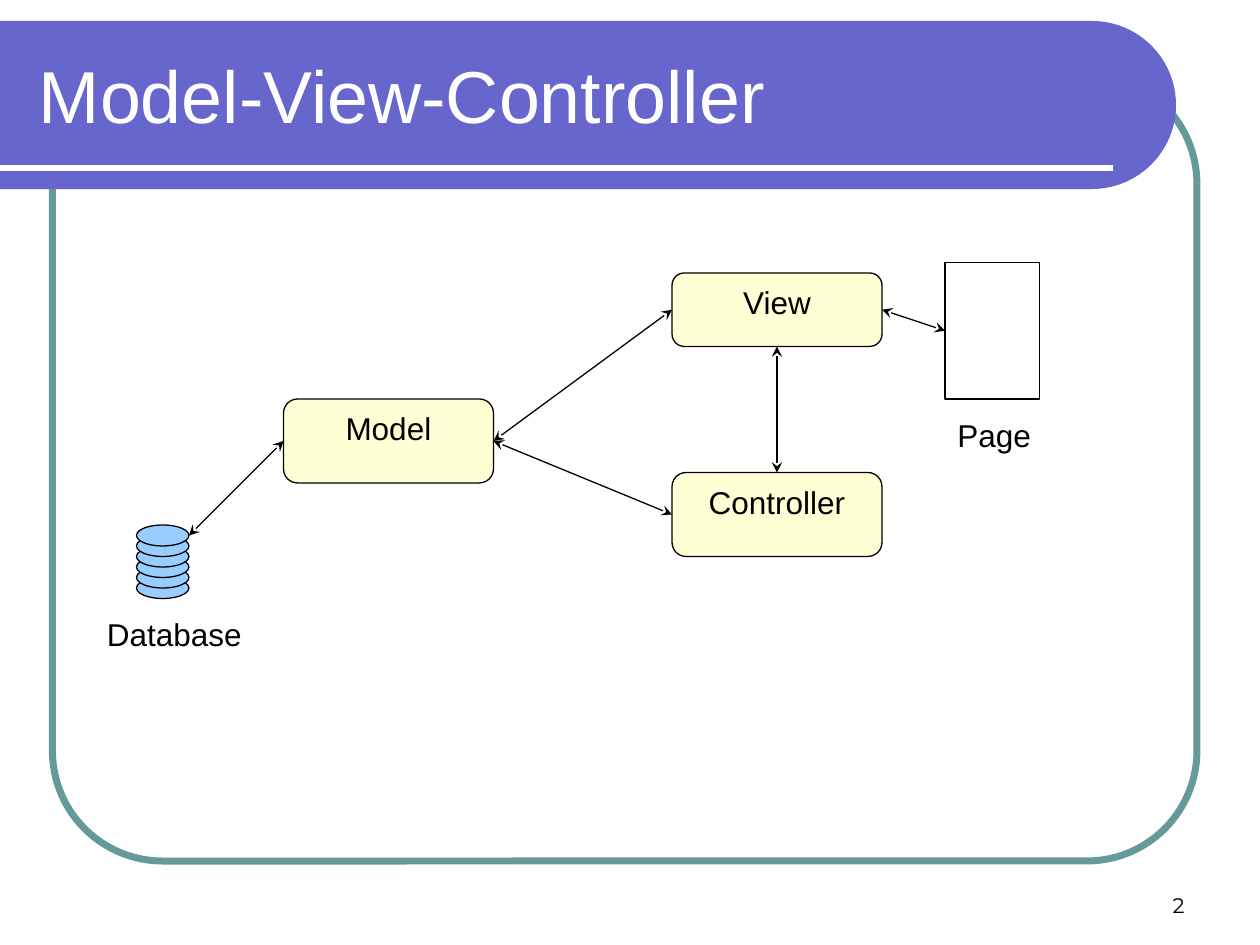
from lxml.etree import SubElement
from pptx import Presentation
from pptx.dml.color import RGBColor
from pptx.enum.shapes import MSO_CONNECTOR as Connector, MSO_SHAPE as Shape
from pptx.enum.text import MSO_ANCHOR as Anchor, MSO_AUTO_SIZE as AutoSize, PP_ALIGN as Align
from pptx.oxml.ns import qn
from pptx.util import Pt

WHITE = RGBColor(0xFF, 0xFF, 0xFF)
BLACK = RGBColor(0x00, 0x00, 0x00)
TEAL = RGBColor(0x66, 0x99, 0x99)
VIOLET = RGBColor(0x66, 0x66, 0xCC)
CREAM = RGBColor(0xFF, 0xFF, 0xD5)
SKY = RGBColor(0x99, 0xCC, 0xFF)

TOP, LEFT, BOTTOM, RIGHT = range(4)


def set_values(target, values):
    for name, value in values.items():
        setattr(target, name, value)


def write_text(shape, text, size, color=BLACK, font="Arial", frame=None, paragraph=None):
    text_frame = shape.text_frame
    text_frame.text = text
    set_values(text_frame, frame or {})
    first = text_frame.paragraphs[0]
    set_values(first, paragraph or {})
    set_values(first.runs[0].font, {"name": font, "size": Pt(size)})
    first.runs[0].font.color.rgb = color


def add_shape(slide, kind, box, fill=None, line=None, width=0.75):
    shape = slide.shapes.add_shape(kind, *map(Pt, box))
    shape.shadow.inherit = False
    if fill is None:
        shape.fill.background()
    else:
        shape.fill.solid()
        shape.fill.fore_color.rgb = fill
    if line is None:
        shape.line.fill.background()
    else:
        shape.line.color.rgb = line
        shape.line.width = Pt(width)
    return shape


def add_line(slide, start, end, color, width):
    line = slide.shapes.add_connector(Connector.STRAIGHT, *map(Pt, start + end))
    line.line.color.rgb = color
    line.line.width = Pt(width)
    SubElement(line._element.spPr, qn("a:effectLst"))
    return line


def add_arrow(slide, start, end):
    arrow = add_line(slide, (78 + 30, 306), (162, 252), BLACK, 0.75)
    if isinstance(start[0], (int, float)):
        arrow.begin_x, arrow.begin_y = map(Pt, start)
    else:
        arrow.begin_connect(*start)
    arrow.end_connect(*end)
    outline = arrow.line._get_or_add_ln()
    for tag in ("a:headEnd", "a:tailEnd"):
        SubElement(outline, qn(tag), type="stealth")


def add_label(slide, text, box):
    label = slide.shapes.add_textbox(*map(Pt, box))
    write_text(label, text, 18, frame={"word_wrap": False},
               paragraph={"space_before": Pt(1.5)})


def add_header(slide, box):
    left, top, width, height = box
    banner_box = (left + (width - height) / 2, top - (width - height) / 2, height, width)
    banner = add_shape(slide, Shape.ROUND_2_SAME_RECTANGLE, banner_box, VIOLET)
    banner.adjustments[0] = 0.5
    banner.rotation = 90
    rule_y = top + height - 12
    add_line(slide, (left, rule_y), (left + width - 36, rule_y), WHITE, 3)

    title = slide.shapes.title
    set_values(title, {"left": Pt(left + 15), "top": Pt(top + 6),
                       "width": Pt(631.5), "height": Pt(72)})
    write_text(title, "Model-View-Controller", 42, WHITE,
               frame={"vertical_anchor": Anchor.MIDDLE, "auto_size": AutoSize.NONE},
               paragraph={"alignment": Align.LEFT})
    slide.shapes._spTree.append(title._element)


def add_page_number(slide, box):
    number = slide.shapes.add_textbox(*map(Pt, box))
    write_text(number, "2", 12, font="Montserrat",
               frame={"word_wrap": True, "vertical_anchor": Anchor.BOTTOM},
               paragraph={"alignment": Align.RIGHT})


def add_database(slide, box, disks=6):
    left, top, width, height = box
    disk_height = 12
    step = (height - disk_height) / (disks - 1)
    for index in reversed(range(disks)):
        add_shape(slide, Shape.OVAL, (left, top + index * step, width, disk_height), SKY, BLACK)
    add_label(slide, "Database", (left - 24, top + height + 6, 92, 28.8))
    return left + width, top + disk_height / 2


def add_page(slide, box):
    left, top, width, height = box
    page = add_shape(slide, Shape.RECTANGLE, box, line=BLACK)
    add_label(slide, "Page", (left, top + height + 6, 57, 28.8))
    return page


def add_component(slide, text, box):
    component = add_shape(slide, Shape.ROUNDED_RECTANGLE, box, CREAM, BLACK)
    write_text(component, text, 18,
               frame={"word_wrap": False, "vertical_anchor": Anchor.TOP},
               paragraph={"alignment": Align.CENTER, "space_before": Pt(1.5)})
    return component


def add_diagram(slide, box):
    left, top, _, _ = box
    database_corner = add_database(slide, (left, top + 150, 30, 42))
    page = add_page(slide, (left + 462, top, 54, 78))
    model = add_component(slide, "Model", (left + 84, top + 78, 120, 48))
    view = add_component(slide, "View", (left + 306, top + 6, 120, 42))
    controller = add_component(slide, "Controller", (left + 306, top + 120, 120, 48))
    for start, end in (
        (database_corner, (model, LEFT)),
        ((model, RIGHT), (view, LEFT)),
        ((controller, TOP), (view, BOTTOM)),
        ((model, RIGHT), (controller, LEFT)),
        ((view, RIGHT), (page, LEFT)),
    ):
        add_arrow(slide, start, end)


def main():
    presentation = Presentation()
    presentation.slide_width, presentation.slide_height = Pt(720), Pt(540)
    slide = presentation.slides.add_slide(presentation.slide_layouts[5])
    frame = add_shape(slide, Shape.ROUNDED_RECTANGLE, (30, 42, 654, 450), line=TEAL, width=4)
    frame.adjustments[0] = 0.14
    add_header(slide, (0, 12, 672, 96))
    add_page_number(slide, (516, 492, 168, 36))
    add_diagram(slide, (78, 150, 516, 192))
    presentation.save("out.pptx")


if __name__ == "__main__":
    main()
